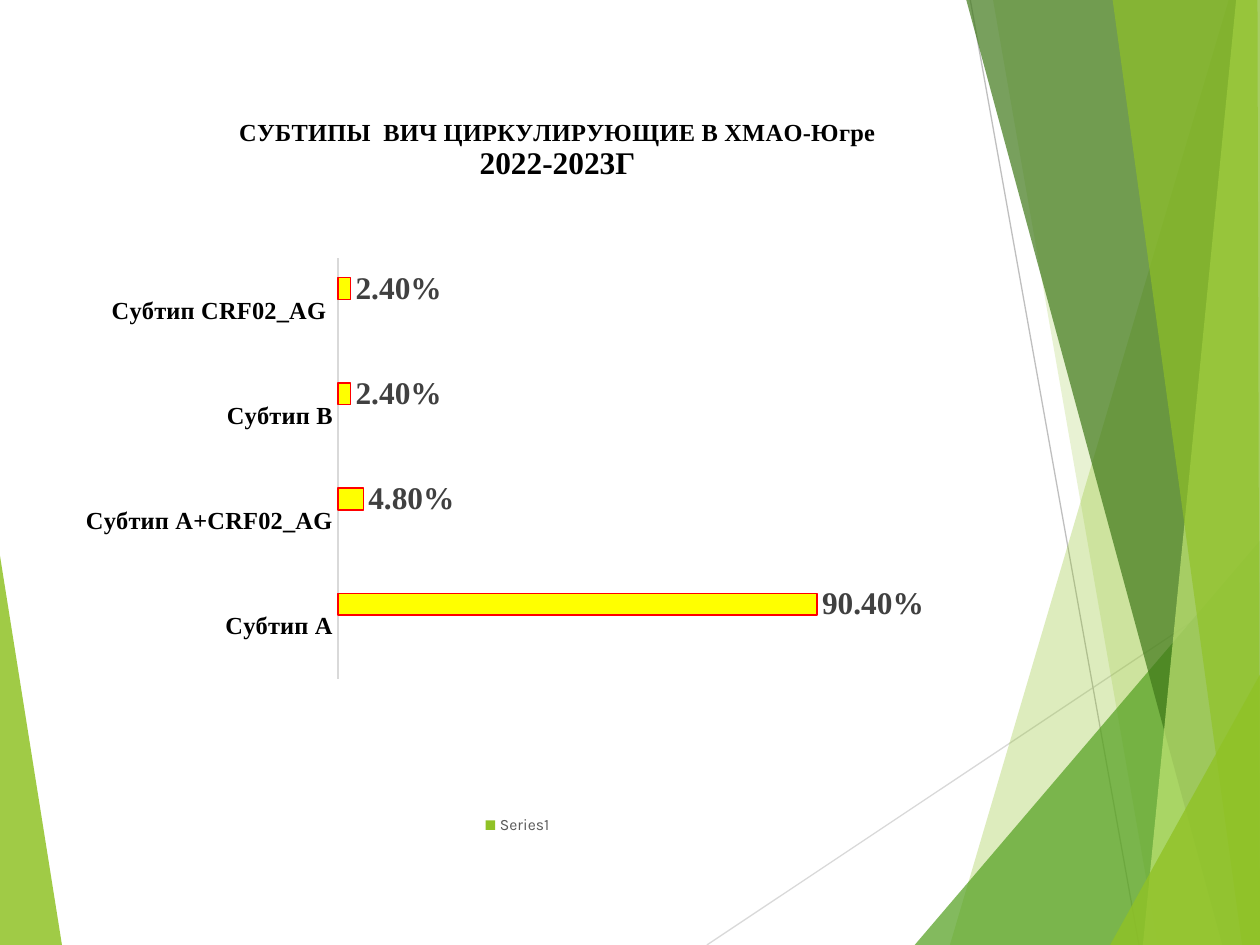
import pptx
import pptx.chart.data
import pptx.dml.color
import pptx.enum.chart
import pptx.oxml
import pptx.oxml.ns
import pptx.util
from lxml import etree

Cm, Pt = pptx.util.Cm, pptx.util.Pt
RGB = pptx.dml.color.RGBColor
qn = pptx.oxml.ns.qn

LIME, GREEN = RGB(0x90, 0xC2, 0x26), RGB(0x54, 0xA0, 0x21)
DARK_GREEN, PALE_LIME = RGB(0x3F, 0x78, 0x19), RGB(0xC0, 0xE4, 0x74)
YELLOW, RED, BLACK = RGB(0xFF, 0xFF, 0), RGB(0xFF, 0, 0), RGB(0, 0, 0)
LIGHT_GREY, MID_GREY = RGB(0xD9, 0xD9, 0xD9), RGB(0xBF, 0xBF, 0xBF)
LABEL_GREY, LEGEND_GREY = RGB(0x40, 0x40, 0x40), RGB(0x59, 0x59, 0x59)
SERIF, SANS = "Times New Roman", "Karla"

W, H = 25.4, 19.05

# Corner points in cm, colour, opacity in percent
LEFT_WEDGE = ([(0, 11.2), (1.25, H), (0, H)], LIME, 85)
RIGHT_FACETS = [
    ([(24.77, 0), (19.15, H), (W, H), (W, 0)], LIME, 30),
    ([(20.02, 0), (23.34, H), (W, H), (W, 0)], LIME, 20),
    ([(18.44, H), (W, 10.9), (W, H)], GREEN, 72),
    ([(19.48, 0), (24.64, H), (W, H), (W, 0)], DARK_GREEN, 70),
    ([(24.92, 0), (23.04, H), (W, H), (W, 0)], PALE_LIME, 70),
    ([(22.43, 0), (25.04, H), (W, H), (25.35, 0)], LIME, 65),
    ([(22.38, H), (W, 13.6), (W, H)], LIME, 80),
]
RAYS = [((14.25, H), (W, 11.62), LIGHT_GREY), ((19.56, 0), (22.96, H), MID_GREY)]

TITLE = [("СУБТИПЫ  ВИЧ ЦИРКУЛИРУЮЩИЕ В ХМАО-Югре", 14), ("2022-2023Г", 18)]
CATEGORIES = ["Субтип А", "Субтип А+CRF02_AG", "Субтип В", "Субтип CRF02_AG "]
SERIES = [
    ("", [None] * 4, LIME),
    ("Series 2", [None] * 4, GREEN),
    ("%", [0.904, 0.048, 0.024, 0.024], YELLOW),
]


def add_facet(s, points, color, opacity):
    pts = [(Cm(x), Cm(y)) for x, y in points]
    builder = s.shapes.build_freeform(*pts[0])
    builder.add_line_segments(pts[1:], close=True)
    sp = builder.convert_to_shape()
    sp.shadow.inherit = False
    sp.fill.solid()
    sp.fill.fore_color.rgb = color
    sp.line.fill.background()
    clr = sp.element.spPr.find(f"{qn('a:solidFill')}/{qn('a:srgbClr')}")
    etree.SubElement(clr, qn("a:alpha")).set("val", str(opacity * 1000))


def add_ray(s, start, end, color):
    line = s.shapes.add_connector(1, *(Cm(v) for v in start + end))
    line.line.color.rgb = color
    line.line.width = Pt(0.75)
    etree.SubElement(line.element.spPr, qn("a:effectLst"))


def style_font(font, size, color, name, bold=False):
    font.size, font.name, font.bold = Pt(size), name, bold
    font.color.rgb = color


def set_layout(parent, index, **values):
    """Give a chart part a manual layout; values are c: element names."""
    for old in parent.findall(qn("c:layout")):
        parent.remove(old)
    layout = etree.Element(qn("c:layout"))
    manual = etree.SubElement(layout, qn("c:manualLayout"))
    for name, value in values.items():
        etree.SubElement(manual, qn(f"c:{name}")).set("val", str(value))
    parent.insert(index, layout)


def add_subtype_chart(s):
    data = pptx.chart.data.CategoryChartData(number_format="0.00%")
    data.categories = CATEGORIES
    for name, values, _ in SERIES:
        data.add_series(name, values)
    chart = s.shapes.add_chart(
        pptx.enum.chart.XL_CHART_TYPE.BAR_CLUSTERED,
        Cm(1.73), Cm(1.5), Cm(17.32), Cm(15.42), data).chart
    style_font(chart.font, 10, BLACK, SANS)

    tf = chart.chart_title.text_frame
    tf.text = "\n".join(text for text, _ in TITLE)
    for p, (_, size) in zip(tf.paragraphs, TITLE):
        style_font(p.runs[0].font, size, BLACK, SERIF, True)
    chart.chart_title.include_in_layout = False

    plot = chart.plots[0]
    plot.gap_width, plot.overlap = 182, 0
    plot.vary_by_categories = False
    for series, (_, _, color) in zip(plot.series, SERIES):
        series.format.fill.solid()
        series.format.fill.fore_color.rgb = color
    shown = plot.series[2]
    shown.format.line.color.rgb = RED
    shown.format.line.width = Pt(0.75)
    labels = shown.data_labels
    labels.show_value = True
    labels.number_format, labels.number_format_is_linked = "0.00%", False
    labels.position = pptx.enum.chart.XL_LABEL_POSITION.OUTSIDE_END
    style_font(labels.font, 18, LABEL_GREY, SERIF, True)

    cat = chart.category_axis
    cat.major_tick_mark = pptx.enum.chart.XL_TICK_MARK.NONE
    cat.format.line.color.rgb = LIGHT_GREY
    cat.format.line.width = Pt(0.75)
    style_font(cat.tick_labels.font, 14, BLACK, SERIF, True)
    val = chart.value_axis
    val.minimum_scale, val.maximum_scale = 0, 1
    val.has_major_gridlines = False
    val.visible = False

    chart.has_legend = True
    legend = chart.legend
    legend.position = pptx.enum.chart.XL_LEGEND_POSITION.BOTTOM
    legend.include_in_layout = False
    style_font(legend.font, 9, LEGEND_GREY, SANS)
    legend_xml = chart.element.xpath(".//c:legend")[0]
    for i in (0, 1):
        entry = etree.Element(qn("c:legendEntry"))
        etree.SubElement(entry, qn("c:idx")).set("val", str(i))
        etree.SubElement(entry, qn("c:delete")).set("val", "1")
        legend_xml.insert(1 + i, entry)

    set_layout(chart.element.xpath("./c:chart/c:title")[0], 1,
               xMode="edge", yMode="edge", x=0.17, y=0.05)
    set_layout(chart.element.xpath(".//c:plotArea")[0], 0,
               layoutTarget="inner", xMode="edge", yMode="edge",
               x=0.29, y=0.24, w=0.62, h=0.55)


def main():
    prs = pptx.Presentation()
    prs.slide_width, prs.slide_height = Cm(W), Cm(H)
    s = prs.slides.add_slide(prs.slide_layouts[6])
    add_facet(s, *LEFT_WEDGE)
    for ray in RAYS:
        add_ray(s, *ray)
    for facet in RIGHT_FACETS:
        add_facet(s, *facet)
    add_subtype_chart(s)
    prs.save("out.pptx")


if __name__ == "__main__":
    main()
